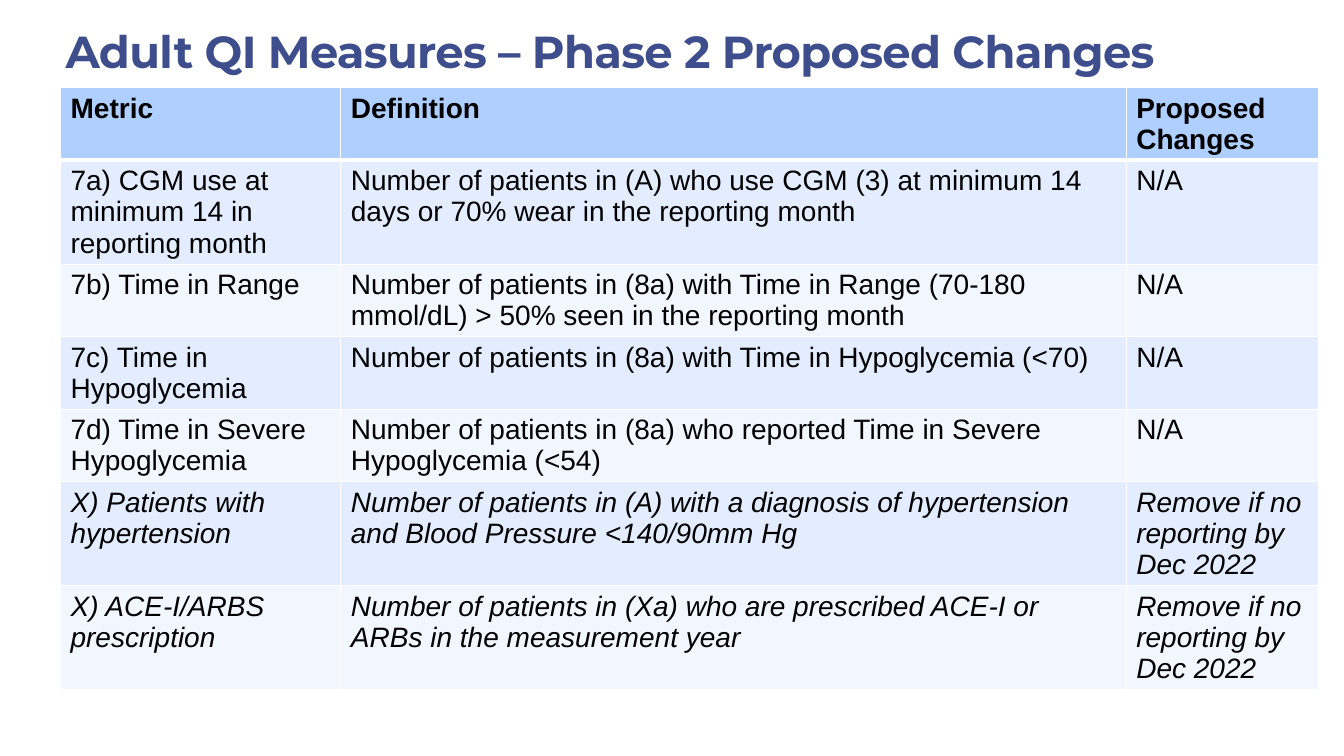
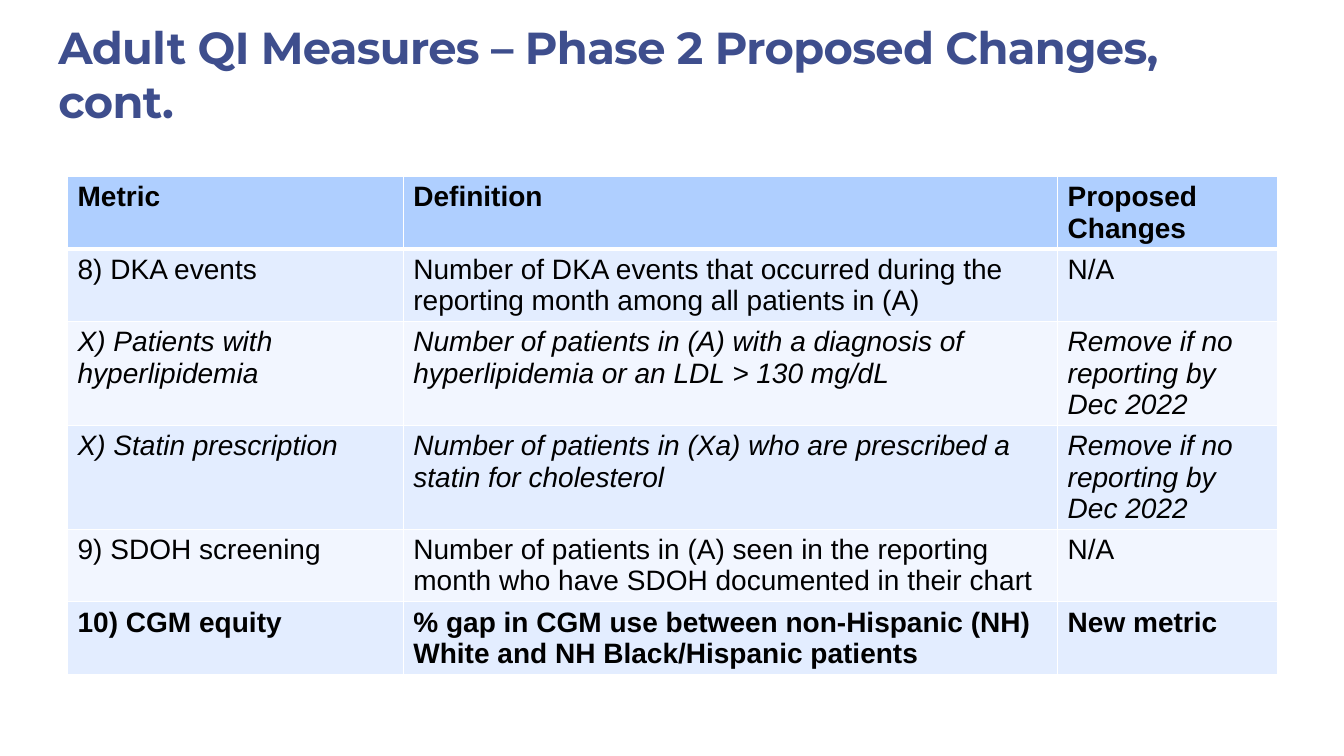
from dataclasses import dataclass

from lxml import etree
from pptx import Presentation
from pptx.dml.color import RGBColor
from pptx.enum.text import MSO_ANCHOR, MSO_AUTO_SIZE, PP_ALIGN
from pptx.oxml.ns import qn
from pptx.util import Inches, Pt

MIDDLE = MSO_ANCHOR.MIDDLE
NO_FIT = MSO_AUTO_SIZE.NONE
LEFT = PP_ALIGN.LEFT

COLORS = {
    "title": "3E4E8D",
    "text": "000000",
    "line": "FFFFFF",
    "head": "AFCFFF",
    "odd": "E3EDFF",
    "even": "F2F6FF",
}
TITLE_FONT, BODY_FONT = "Montserrat", "Arial"
ROW_HEIGHT = 0.41
TITLE = "Adult QI Measures – Phase 2 Proposed Changes"
REMOVE = "Remove if no reporting by Dec 2022"


@dataclass
class Row:
    metric: str
    meaning: str
    change: str = "N/A"
    bold: bool = False
    italic: bool = False


@dataclass
class Page:
    title: str
    title_at: tuple[float, float]
    table_at: tuple[float, float]
    widths: tuple[float, ...]
    rows: list[Row]


HEAD = Row("Metric", "Definition", "Proposed Changes", bold=True)

PAGES = [
    Page(TITLE, (0.6, 0.25), (0.6, 0.87), (2.78, 7.79, 1.91), [
        Row("7a) CGM use at minimum 14 in reporting month",
            "Number of patients in (A) who use CGM (3) at minimum 14 days "
            "or 70% wear in the reporting month"),
        Row("7b) Time in Range",
            "Number of patients in (8a) with Time in Range (70-180 mmol/dL) "
            "> 50% seen in the reporting month"),
        Row("7c) Time in Hypoglycemia",
            "Number of patients in (8a) with Time in Hypoglycemia (<70)"),
        Row("7d) Time in Severe Hypoglycemia",
            "Number of patients in (8a) who reported Time in Severe "
            "Hypoglycemia (<54)"),
        Row("X) Patients with hypertension",
            "Number of patients in (A) with a diagnosis of hypertension "
            "and Blood Pressure <140/90mm Hg", REMOVE, italic=True),
        Row("X) ACE-I/ARBS prescription",
            "Number of patients in (Xa) who are prescribed ACE-I or ARBs "
            "in the measurement year", REMOVE, italic=True),
    ]),
    Page(TITLE + ", cont.", (0.53, 0.48), (0.67, 1.75), (3.33, 6.49, 2.18), [
        Row("8) DKA events",
            "Number of DKA events that occurred during the reporting month "
            "among all patients in (A)"),
        Row("X) Patients with hyperlipidemia",
            "Number of patients in (A) with a diagnosis of hyperlipidemia "
            "or an LDL > 130 mg/dL", REMOVE, italic=True),
        Row("X) Statin prescription",
            "Number of patients in (Xa) who are prescribed a statin "
            "for cholesterol", REMOVE, italic=True),
        Row("9) SDOH screening",
            "Number of patients in (A) seen in the reporting month who have "
            "SDOH documented in their chart"),
        Row("10) CGM equity",
            "% gap in CGM use between non-Hispanic (NH) White and "
            "NH Black/Hispanic patients", "New metric", bold=True),
    ]),
]


def style(font, name: str, size: float, color: str) -> None:
    font.name = name
    font.size = Pt(size)
    font.color.rgb = RGBColor.from_string(COLORS[color])


def add_title(slide, page: Page) -> None:
    title = slide.shapes.title
    title.left, title.top = (Inches(n) for n in page.title_at)
    title.width, title.height = Inches(12), Inches(0.5)
    frame = title.text_frame
    frame.text = page.title
    frame.word_wrap = True
    frame.auto_size = NO_FIT
    frame.vertical_anchor = MIDDLE
    frame.margin_left = frame.margin_right = Inches(0.05)
    frame.margin_top = frame.margin_bottom = Inches(0.05)
    para = frame.paragraphs[0]
    para.alignment = LEFT
    font = para.runs[0].font
    style(font, TITLE_FONT, 32, "title")
    font.bold = True
    para.runs[0]._r.get_or_add_rPr().set("spc", "-50")


def add_borders(cell, top: float, bottom: float) -> None:
    """Line all four sides; must run before the cell is filled."""
    props = cell._tc.get_or_add_tcPr()
    for side, width in (("L", 1), ("R", 1), ("T", top), ("B", bottom)):
        line = etree.SubElement(props, qn(f"a:ln{side}"), w=str(Pt(width)))
        fill = etree.SubElement(line, qn("a:solidFill"))
        etree.SubElement(fill, qn("a:srgbClr"), val=COLORS["line"])


def fill_cell(cell, text: str, row: Row, index: int) -> None:
    add_borders(cell, 3 if index == 1 else 1, 3 if index == 0 else 1)
    shade = "head" if index == 0 else "odd" if index % 2 else "even"
    cell.fill.solid()
    cell.fill.fore_color.rgb = RGBColor.from_string(COLORS[shade])
    cell.text = text
    font = cell.text_frame.paragraphs[0].runs[0].font
    style(font, BODY_FONT, 20, "text")
    font.bold, font.italic = row.bold, row.italic


def add_grid(slide, page: Page) -> None:
    rows = [HEAD, *page.rows]
    left, top = page.table_at
    table = slide.shapes.add_table(
        len(rows), len(page.widths), Inches(left), Inches(top),
        Inches(sum(page.widths)), Inches(ROW_HEIGHT * len(rows))).table
    table.horz_banding = False
    for column, width in zip(table.columns, page.widths):
        column.width = Inches(width)
    for index, row in enumerate(rows):
        texts = (row.metric, row.meaning, row.change)
        for cell, text in zip(table.rows[index].cells, texts):
            fill_cell(cell, text, row, index)


def main() -> None:
    deck = Presentation()
    deck.slide_width, deck.slide_height = Inches(13.33), Inches(7.5)
    layout = deck.slide_layouts.get_by_name("Title Only")
    for page in PAGES:
        slide = deck.slides.add_slide(layout)
        add_title(slide, page)
        add_grid(slide, page)
    deck.save("out.pptx")


if __name__ == "__main__":
    main()
